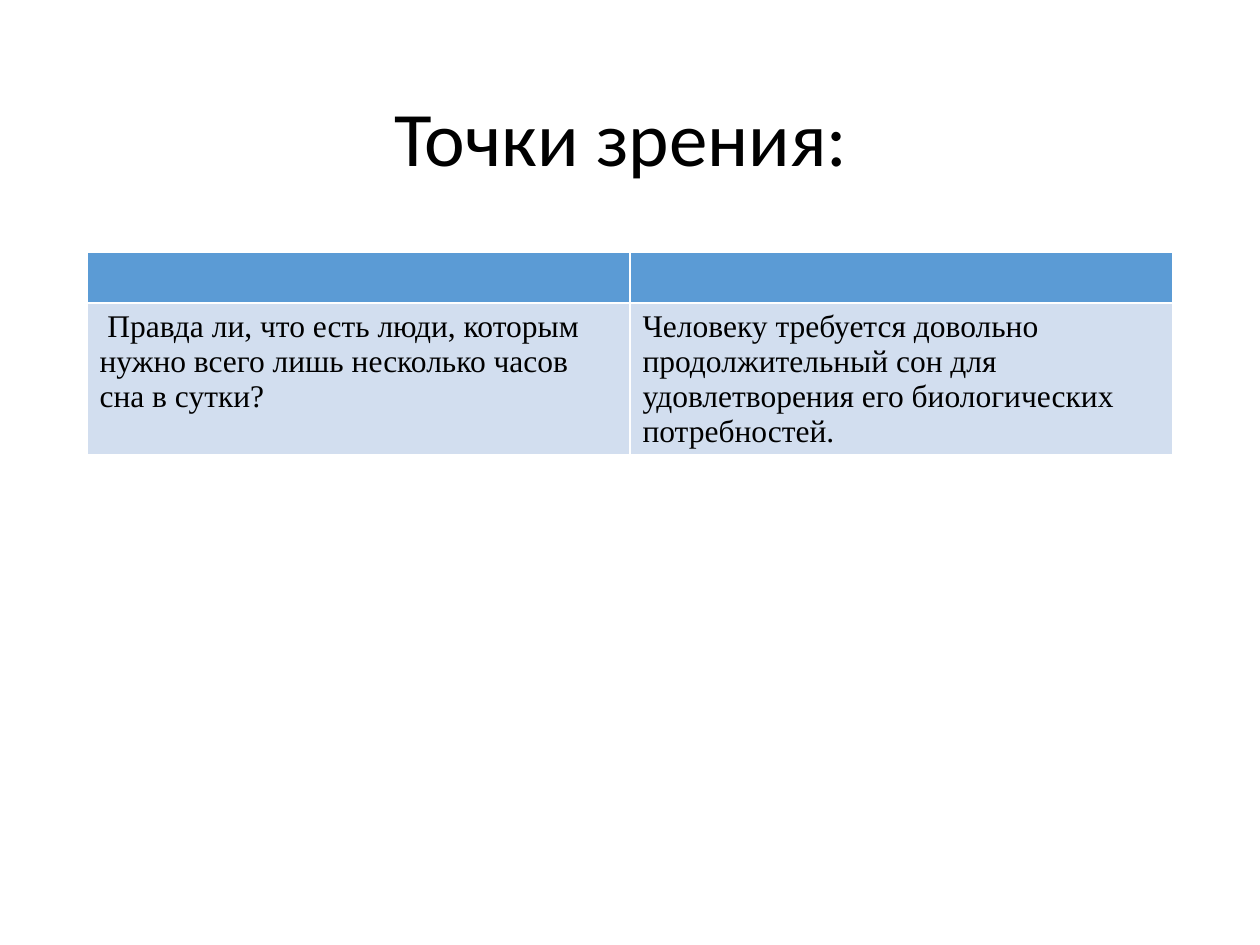
"""Build a slide with a title and a two-column table of viewpoints."""
from pptx import Presentation
from pptx.dml.color import RGBColor
from pptx.enum.text import MSO_ANCHOR, PP_ALIGN
from pptx.util import Pt

CENTER, LEFT = PP_ALIGN.CENTER, PP_ALIGN.LEFT
MIDDLE = MSO_ANCHOR.MIDDLE
PX = 914400 // 126

TITLE = "Точки зрения: "
ROWS = [
    ("", ""),
    (
        " Правда ли, что есть люди, которым нужно всего лишь несколько часов сна в сутки?",
        "Человеку требуется довольно продолжительный сон для удовлетворения его "
        "биологических потребностей.",
    ),
]
ROW_FILLS = ["5B9BD5", "D2DEEF"]
ROW_HEIGHTS = [51, 152]
LEFT_EDGE, WIDTH = 87, 1086
TITLE_TOP, TITLE_HEIGHT = 50, 183
TABLE_TOP = 252


def color(value):
    return RGBColor.from_string(value)


def write(frame, text, font, size, align=LEFT, spacing=None):
    paragraph = frame.paragraphs[0]
    paragraph.alignment = align
    paragraph.line_spacing = spacing
    paragraph.font.size = Pt(size)
    if text:
        run = paragraph.add_run()
        run.text = text
        run.font.name = font
        run.font.size = Pt(size)
        run.font.bold = False
        run.font.color.rgb = color("000000")


def place(left, top, width, height):
    return [value * PX for value in (left, top, width, height)]


def main():
    presentation = Presentation()
    presentation.slide_width, presentation.slide_height = 1260 * PX, 945 * PX
    slide = presentation.slides.add_slide(presentation.slide_layouts[5])

    title = slide.shapes.title
    title.left, title.top, title.width, title.height = place(
        LEFT_EDGE, TITLE_TOP, WIDTH, TITLE_HEIGHT)
    title.text_frame.vertical_anchor = MIDDLE
    write(title.text_frame, TITLE, "Calibri", 44, align=CENTER, spacing=0.9)

    table = slide.shapes.add_table(
        len(ROWS), len(ROWS[0]),
        *place(LEFT_EDGE, TABLE_TOP, WIDTH, sum(ROW_HEIGHTS))).table
    for row, texts, fill, height in zip(table.rows, ROWS, ROW_FILLS, ROW_HEIGHTS):
        row.height = height * PX
        for cell, text in zip(row.cells, texts):
            cell.fill.solid()
            cell.fill.fore_color.rgb = color(fill)
            write(cell.text_frame, text, "Times New Roman", 18)

    presentation.save("out.pptx")


if __name__ == "__main__":
    main()
